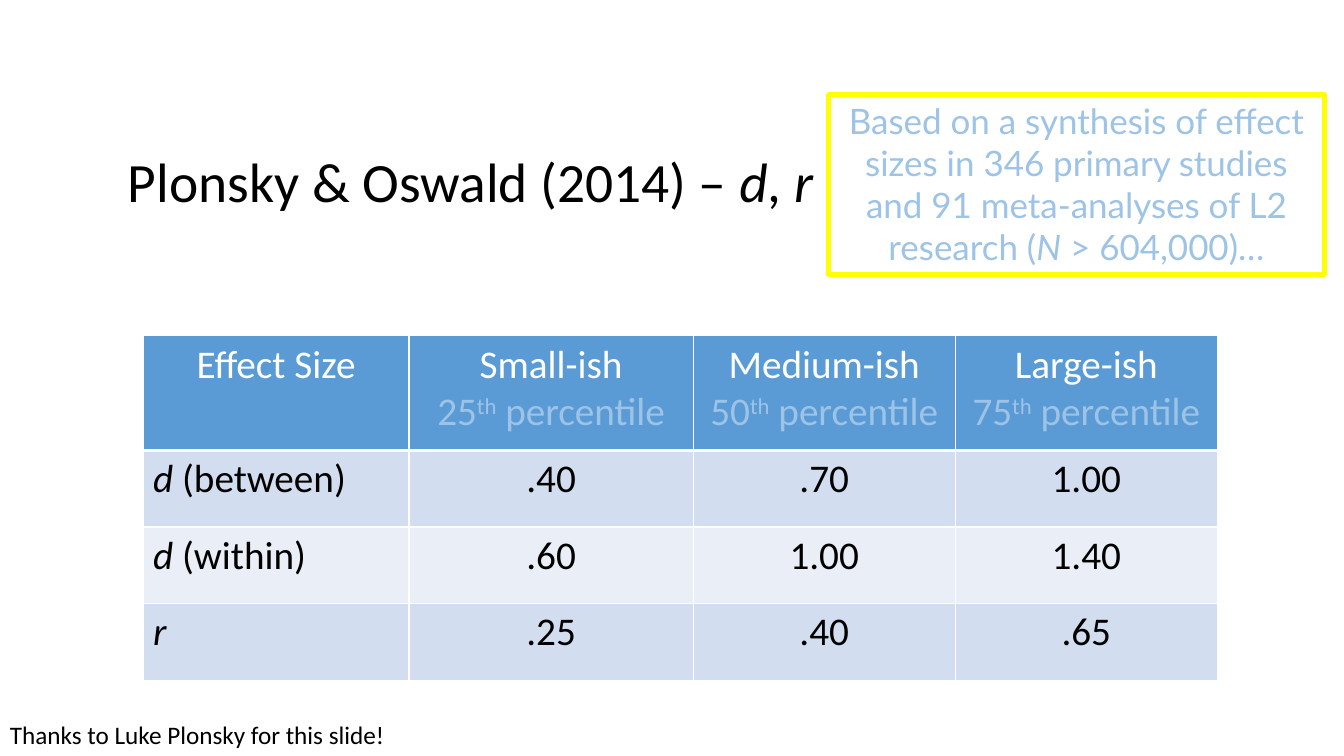
from lxml import etree
from pptx import Presentation
from pptx.dml.color import RGBColor
from pptx.enum import shapes, text
from pptx.oxml import ns
from pptx.util import Pt

# Content: each paragraph is a list of (text, style) runs
PLAIN, ITALIC, SUPER = "plain", "italic", "super"
TITLE = [("Plonsky & Oswald (2014) – ", PLAIN), ("d", ITALIC),
         (", ", PLAIN), ("r", ITALIC)]
BASIS = [("Based on a synthesis of effect sizes in 346 primary studies "
          "and 91 meta-analyses of L2 research (", PLAIN),
         ("N", ITALIC), (" > 604,000)…", PLAIN)]
THANKS = [("Thanks to Luke Plonsky for this slide!", PLAIN)]
BENCHMARKS = [("Small-ish", "25"), ("Medium-ish", "50"), ("Large-ish", "75")]
EFFECTS = [("d", " (between)", [".40", ".70", "1.00"]),
           ("d", " (within)", [".60", "1.00", "1.40"]),
           ("r", "", [".25", ".40", ".65"])]

# Look
BLACK, WHITE, PALE_BLUE, YELLOW = "000000", "FFFFFF", "9DC3E6", "FFFF00"
HEADER_FILL, BAND_FILLS = "5B9BD5", ["D2DEEF", "EAEFF7"]
COLUMN_WIDTHS = [190, 203, 187.2, 187.2]
HEADER_HEIGHT, ROW_HEIGHT = 82, 54.7
LEFT, CENTER = text.PP_ALIGN.LEFT, text.PP_ALIGN.CENTER


def color(hex_string):
    return RGBColor.from_string(hex_string)


def write(paragraph, runs, size, ink, font="Calibri", align=LEFT):
    paragraph.alignment = align
    for words, style in runs:
        run = paragraph.add_run()
        run.text = words
        run.font.name = font
        run.font.size = Pt(size)
        run.font.bold = False
        run.font.italic = style == ITALIC
        run.font.color.rgb = color(ink)
        if style == SUPER:
            run.font._element.set("baseline", "30000")


def paint_cell(cell, fill, bottom_width=1):
    cell.fill.solid()
    cell.fill.fore_color.rgb = color(fill)
    properties = cell._tc.get_or_add_tcPr()
    for position, side in enumerate("LRTB"):
        width = bottom_width if side == "B" else 1
        border = etree.Element(ns.qn(f"a:ln{side}"), w=str(Pt(width)))
        solid = etree.SubElement(border, ns.qn("a:solidFill"))
        etree.SubElement(solid, ns.qn("a:srgbClr"), val=WHITE)
        properties.insert(position, border)


deck = Presentation()
deck.slide_width, deck.slide_height = Pt(960), Pt(540)
slide = deck.slides.add_slide(deck.slide_layouts[5])

# Title
title = slide.shapes.title
title.left, title.top, title.width, title.height = map(Pt, (84.2, 83.5, 508, 96.5))
title.text_frame.word_wrap = True
title.text_frame.auto_size = text.MSO_AUTO_SIZE.NONE
title.text_frame.vertical_anchor = text.MSO_ANCHOR.MIDDLE
title.text_frame.paragraphs[0].line_spacing = 0.9
write(title.text_frame.paragraphs[0], TITLE, 39.6, BLACK)

# Benchmark table
table_height = HEADER_HEIGHT + len(EFFECTS) * ROW_HEIGHT
benchmarks = slide.shapes.add_table(
    len(EFFECTS) + 1, len(COLUMN_WIDTHS), Pt(102.2), Pt(239.8),
    Pt(sum(COLUMN_WIDTHS)), Pt(table_height)).table
for column, width in zip(benchmarks.columns, COLUMN_WIDTHS):
    column.width = Pt(width)
for index, row in enumerate(benchmarks.rows):
    row.height = Pt(ROW_HEIGHT if index else HEADER_HEIGHT)
    for cell in row.cells:
        if index:
            paint_cell(cell, BAND_FILLS[(index - 1) % 2])
        else:
            paint_cell(cell, HEADER_FILL, bottom_width=3)

# Header row
write(benchmarks.cell(0, 0).text_frame.paragraphs[0],
      [("Effect Size", PLAIN)], 28, WHITE, align=CENTER)
for column, (label, rank) in enumerate(BENCHMARKS, 1):
    frame = benchmarks.cell(0, column).text_frame
    write(frame.paragraphs[0], [(label, PLAIN)], 28, WHITE, align=CENTER)
    percentile = [(rank, PLAIN), ("th", SUPER), (" percentile", PLAIN)]
    write(frame.add_paragraph(), percentile, 28, PALE_BLUE, align=CENTER)

# Effect size rows
for index, (symbol, design, values) in enumerate(EFFECTS, 1):
    effect = [(symbol, ITALIC)] + ([(design, PLAIN)] if design else [])
    write(benchmarks.cell(index, 0).text_frame.paragraphs[0], effect, 28, BLACK)
    for column, value in enumerate(values, 1):
        write(benchmarks.cell(index, column).text_frame.paragraphs[0],
              [(value, PLAIN)], 28, BLACK, align=CENTER)

# Basis of the benchmarks
basis = slide.shapes.add_shape(shapes.MSO_SHAPE.RECTANGLE,
                               Pt(591.8), Pt(67.7), Pt(354.2), Pt(128.2))
basis.shadow.inherit = False
basis.fill.solid()
basis.fill.fore_color.rgb = color(WHITE)
basis.line.color.rgb = color(YELLOW)
basis.line.width = Pt(3.25)
basis.text_frame.word_wrap = True
basis.text_frame.vertical_anchor = text.MSO_ANCHOR.TOP
basis.text_frame.auto_size = text.MSO_AUTO_SIZE.SHAPE_TO_FIT_TEXT
write(basis.text_frame.paragraphs[0], BASIS, 25, PALE_BLUE, "Lato", CENTER)

# Thanks
thanks = slide.shapes.add_textbox(Pt(0), Pt(510.5), Pt(291), Pt(29.5))
thanks.text_frame.word_wrap = True
thanks.text_frame.auto_size = text.MSO_AUTO_SIZE.SHAPE_TO_FIT_TEXT
write(thanks.text_frame.paragraphs[0], THANKS, 18, BLACK)

deck.save("out.pptx")
